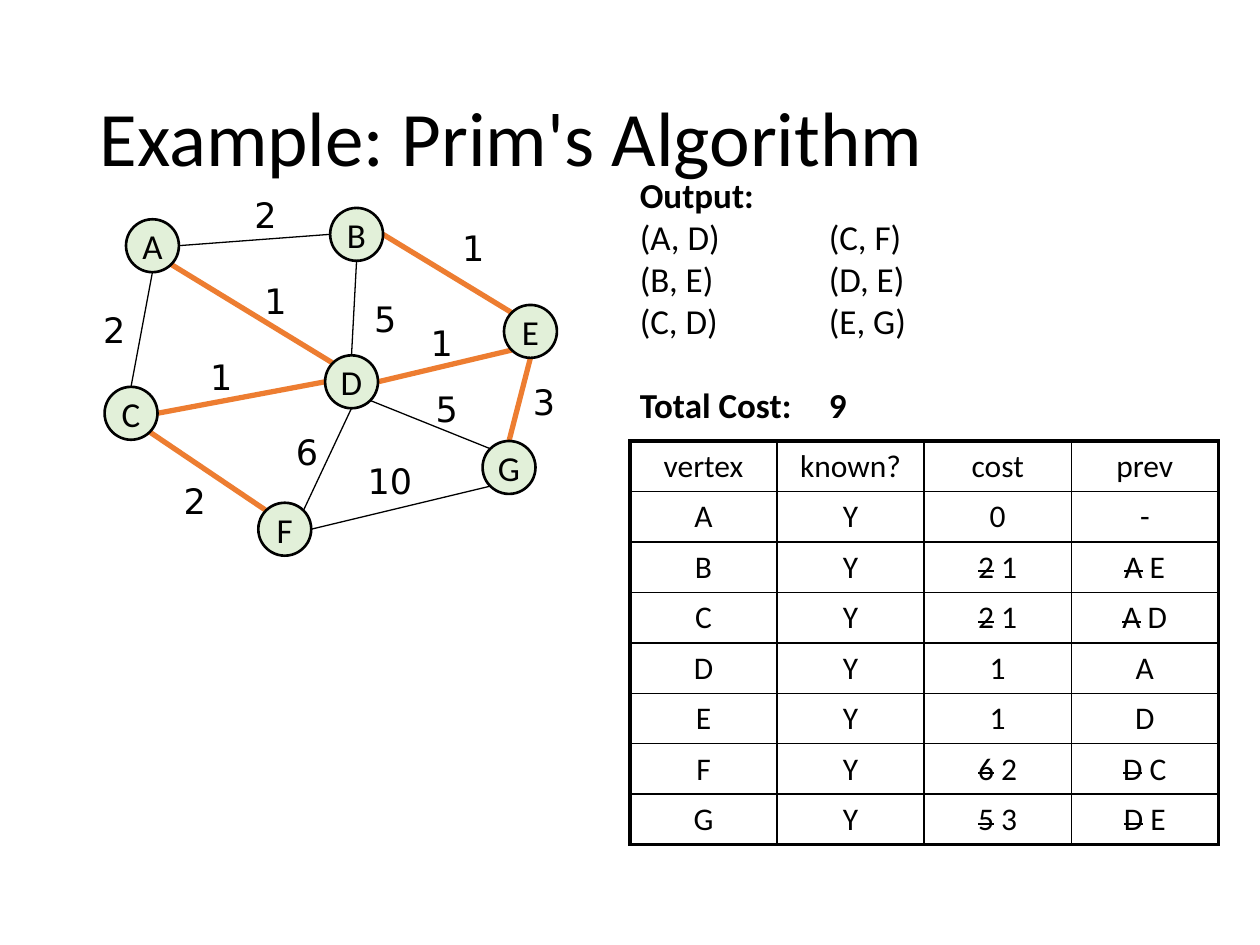
from lxml.etree import SubElement
from pptx import Presentation
from pptx.dml.color import RGBColor
from pptx.enum.shapes import MSO_CONNECTOR as Connector, MSO_SHAPE as Shape
from pptx.enum.text import MSO_ANCHOR as Anchor, MSO_AUTO_SIZE as AutoSize, PP_ALIGN as Align
from pptx.oxml.ns import qn
from pptx.util import Inches, Pt

BLACK, ORANGE, PALE_GREEN = "000000", "ED7D31", "E2F0D9"
NODE_SIZE = 0.42
DIAGONAL = 0.7071

COMPASS = {
    "N": (0, -1), "S": (0, 1), "W": (-1, 0), "E": (1, 0),
    "NW": (-DIAGONAL, -DIAGONAL), "NE": (DIAGONAL, -DIAGONAL),
    "SW": (-DIAGONAL, DIAGONAL), "SE": (DIAGONAL, DIAGONAL),
}
NODES = {
    "A": (0.28, 0.25), "B": (1.9, 0.16), "C": (0.11, 1.58), "D": (1.86, 1.33),
    "F": (1.33, 2.5), "E": (3.28, 0.93), "G": (3.11, 2.01),
}
EDGES = [
    ("A", "S", "C", "N", "2", (0, 0.91), False),
    ("B", "W", "A", "E", "2", (1.2, 0), False),
    ("D", "N", "B", "S", "5", (2.15, 0.82), False),
    ("A", "SE", "D", "NW", "1", (1.28, 0.68), True),
    ("C", "E", "D", "W", "1", (0.85, 1.28), True),
    ("D", "E", "E", "SW", "1", (2.6, 1.01), True),
    ("E", "NW", "B", "E", "1", (2.85, 0.26), True),
    ("C", "SE", "F", "NW", "2", (0.64, 2.27), True),
    ("D", "S", "F", "NE", "6", (1.53, 1.88), False),
    ("D", "SE", "G", "NW", "5", (2.64, 1.54), False),
    ("G", "N", "E", "S", "3", (3.41, 1.48), True),
    ("F", "E", "G", "SW", "10", (2.1, 2.11), False),
]
VERTEX_ROWS = [
    ("vertex", "known?", "cost", "prev"),
    ("A", "Y", "0", "-"),
    ("B", "Y", ("2", " 1"), ("A", " E")),
    ("C", "Y", ("2", " 1"), ("A", " D")),
    ("D", "Y", "1", "A"),
    ("E", "Y", "1", "D"),
    ("F", "Y", ("6", " 2"), ("D", " C")),
    ("G", "Y", ("5", " 3"), ("D", " E")),
]
OUTPUT_LINES = [
    ("Output:", True),
    ("(A, D)\t\t(C, F)", False),
    ("(B, E)\t\t(D, E)", False),
    ("(C, D)\t\t(E, G)", False),
    ("Total Cost: \t9", True),
]


def color(value):
    return RGBColor.from_string(value)


def apply(target, **formats):
    for name, value in formats.items():
        setattr(target, name, value)


def add_run(paragraph, wording, size, font="Calibri", bold=False):
    run = paragraph.add_run()
    run.text = wording
    apply(run.font, name=font, size=Pt(size), bold=bold)
    run.font.color.rgb = color(BLACK)
    return run


def place_title(slide, left, top, width, height):
    title = slide.shapes.title
    apply(title, left=Inches(left), top=Inches(top),
          width=Inches(width), height=Inches(height))
    apply(title.text_frame, vertical_anchor=Anchor.MIDDLE,
          auto_size=AutoSize.NONE, word_wrap=True)
    heading = title.text_frame.paragraphs[0]
    apply(heading, alignment=Align.LEFT, line_spacing=0.9)
    add_run(heading, "Example: Prim's Algorithm", 44)


def node_site(node, side):
    return [Inches(corner + NODE_SIZE / 2 * (1 + step))
            for corner, step in zip(NODES[node], COMPASS[side])]


def draw_edge(slide, origin, start, start_side, end, end_side, in_tree):
    ends = node_site(start, start_side) + node_site(end, end_side)
    ends = [offset + base for offset, base in zip(ends, origin * 2)]
    edge = slide.shapes.add_connector(Connector.STRAIGHT, *ends)
    edge.line.color.rgb = color(ORANGE if in_tree else BLACK)
    edge.line.width = Pt(3 if in_tree else 0.75)
    SubElement(edge._element.spPr, qn("a:effectLst"))


def draw_weight(slide, left, top, weight):
    label = slide.shapes.add_textbox(
        left, top, Inches(0.2 + 0.18 * len(weight)), Inches(0.44))
    apply(label.text_frame, word_wrap=False, auto_size=AutoSize.SHAPE_TO_FIT_TEXT)
    add_run(label.text_frame.paragraphs[0], weight, 20, "DejaVu Sans")


def draw_node(slide, left, top, letter):
    node = slide.shapes.add_shape(
        Shape.OVAL, left, top, Inches(NODE_SIZE), Inches(NODE_SIZE))
    node.shadow.inherit = False
    node.fill.solid()
    node.fill.fore_color.rgb = color(PALE_GREEN)
    node.line.color.rgb = color(BLACK)
    node.line.width = Pt(1.5)
    apply(node.text_frame, word_wrap=False, vertical_anchor=Anchor.MIDDLE)
    caption = node.text_frame.paragraphs[0]
    caption.alignment = Align.CENTER
    add_run(caption, letter, 20)


def draw_graph(slide, left, top):
    origin = (Inches(left), Inches(top))
    for *ends, weight, (x, y), in_tree in EDGES:
        draw_edge(slide, origin, *ends, in_tree)
        draw_weight(slide, Inches(left + x), Inches(top + y), weight)
    for letter, (x, y) in NODES.items():
        draw_node(slide, Inches(left + x), Inches(top + y), letter)


def set_borders(cell, outer_sides):
    properties = cell._tc.get_or_add_tcPr()
    for side in ("lnL", "lnR", "lnT", "lnB"):
        width = Pt(2.25 if side in outer_sides else 1)
        border = SubElement(properties, qn(f"a:{side}"), w=str(int(width)))
        paint = SubElement(border, qn("a:solidFill"))
        SubElement(paint, qn("a:srgbClr"), val=BLACK)


def fill_cell(cell, content):
    paragraph = cell.text_frame.paragraphs[0]
    paragraph.alignment = Align.CENTER
    if isinstance(content, str):
        add_run(paragraph, content, 18)
        return
    replaced, current = content
    old_value = add_run(paragraph, replaced, 18)
    old_value.font._element.set("strike", "sngStrike")
    add_run(paragraph, current, 18)


def draw_vertex_table(slide, left, top, width, height):
    row_count, column_count = len(VERTEX_ROWS), len(VERTEX_ROWS[0])
    table = slide.shapes.add_table(
        row_count, column_count, Inches(left), Inches(top),
        Inches(width), Inches(height)).table
    apply(table, first_row=False, horz_banding=False)
    for r, contents in enumerate(VERTEX_ROWS):
        for c, content in enumerate(contents):
            edges = {"lnL": c == 0, "lnR": c == column_count - 1,
                     "lnT": r == 0, "lnB": r == row_count - 1}
            cell = table.cell(r, c)
            set_borders(cell, [side for side, outer in edges.items() if outer])
            cell.fill.background()
            fill_cell(cell, content)


def write_output(slide, left, top, width, height):
    output = slide.shapes.add_textbox(
        Inches(left), Inches(top), Inches(width), Inches(height))
    frame = output.text_frame
    apply(frame, word_wrap=True, auto_size=AutoSize.SHAPE_TO_FIT_TEXT)
    for index, (wording, bold) in enumerate(OUTPUT_LINES):
        paragraph = frame.add_paragraph() if index else frame.paragraphs[0]
        if index == len(OUTPUT_LINES) - 1:
            paragraph.space_before = Pt(24)
        tabs = SubElement(paragraph._p.get_or_add_pPr(), qn("a:tabLst"))
        for stop in (0.75, 1.5):
            SubElement(tabs, qn("a:tab"), pos=str(int(Inches(stop))), algn="l")
        add_run(paragraph, wording, 20, bold=bold)


def main():
    deck = Presentation()
    apply(deck, slide_width=Inches(10), slide_height=Inches(7.5))
    slide = deck.slides.add_slide(deck.slide_layouts[5])
    place_title(slide, 0.69, 0.4, 8.62, 1.45)
    draw_graph(slide, 0.72, 1.49)
    draw_vertex_table(slide, 5, 3.5, 4.67, 3.2)
    write_output(slide, 4.98, 1.33, 4.6, 2.12)
    deck.save("out.pptx")


if __name__ == "__main__":
    main()
